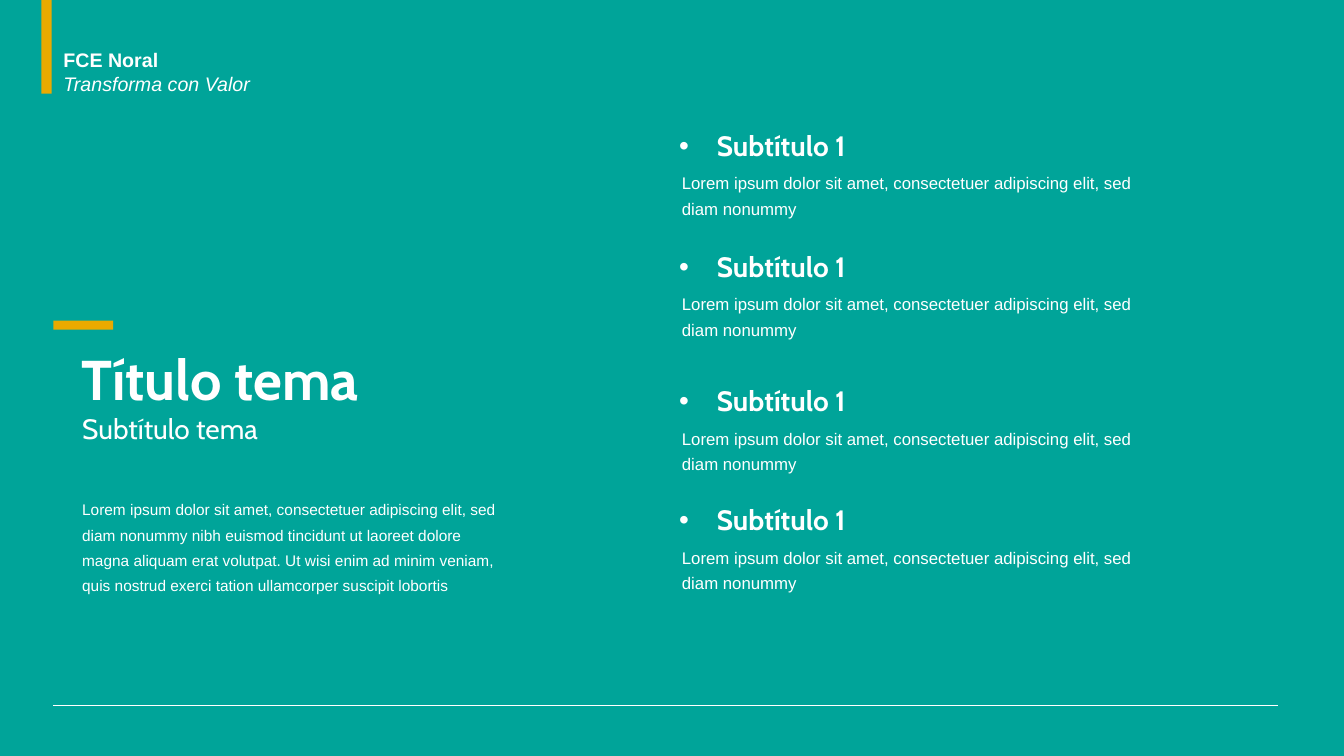
from dataclasses import dataclass

from lxml import etree
from pptx import Presentation
from pptx.dml.color import RGBColor
from pptx.enum.shapes import MSO_CONNECTOR, MSO_SHAPE
from pptx.enum.text import MSO_ANCHOR, MSO_AUTO_SIZE
from pptx.oxml.ns import qn
from pptx.slide import Slide
from pptx.text.text import _Paragraph
from pptx.util import Pt

RECT = MSO_SHAPE.RECTANGLE
LINE = MSO_CONNECTOR.STRAIGHT
TOP = MSO_ANCHOR.TOP
MID = MSO_ANCHOR.MIDDLE
GROW = MSO_AUTO_SIZE.SHAPE_TO_FIT_TEXT
FIXED = MSO_AUTO_SIZE.NONE

WHITE = "FFFFFF"
TEAL = "00A499"
GOLD = "EAAA00"
LOREM = "Lorem ipsum dolor sit amet, consectetuer adipiscing elit, sed diam nonummy"
BODY = (LOREM + " nibh euismod tincidunt ut laoreet dolore magna aliquam erat volutpat. "
        "Ut wisi enim ad minim veniam, quis nostrud exerci tation ullamcorper "
        "suscipit lobortis")


@dataclass(frozen=True)
class Box:
    left: float
    top: float
    width: float
    height: float


@dataclass(frozen=True)
class Topic:
    top: float
    width: float
    title: str = "Subtítulo 1"
    text: str = LOREM


BARS = [Box(29.5, 0, 7.4, 67), Box(38.2, 229, 42.7, 6.5)]
TOPICS = [Topic(91.4, 349), Topic(177.8, 337), Topic(273.6, 337), Topic(358.6, 337)]


def color(code: str) -> RGBColor:
    return RGBColor.from_string(code)


def add_bullet(para: _Paragraph, indent: float) -> None:
    props = para._p.get_or_add_pPr()
    props.set("marL", str(Pt(indent)))
    props.set("indent", str(-Pt(indent)))
    etree.SubElement(props, qn("a:buFont")).set("typeface", "Arial")
    etree.SubElement(props, qn("a:buChar")).set("char", "•")


def add_text(slide: Slide, box: Box, text: str, *, size: float, font: str = "Arial",
             bold: bool = False, anchor: MSO_ANCHOR = TOP, grow: bool = False,
             wrap: bool = True, lead: float | Pt | None = None, before: float = 0,
             bullet: bool = False, slogan: str = "") -> None:
    shape = slide.shapes.add_textbox(Pt(box.left), Pt(box.top), Pt(box.width), Pt(box.height))
    frame = shape.text_frame
    frame.word_wrap = wrap
    frame.auto_size = GROW if grow else FIXED
    frame.vertical_anchor = anchor
    para = frame.paragraphs[0]
    para.line_spacing = lead
    para.space_before = Pt(before)
    if bullet:
        add_bullet(para, 27)
    parts = [(para, text, bold, False)]
    if slogan:
        parts.append((frame.add_paragraph(), slogan, False, True))
    for para, words, heavy, slant in parts:
        run = para.add_run()
        run.text = words
        run.font.name = font
        run.font.size = Pt(size)
        run.font.bold = heavy
        run.font.italic = slant
        run.font.color.rgb = color(WHITE)


def add_bar(slide: Slide, box: Box) -> None:
    bar = slide.shapes.add_shape(RECT, Pt(box.left), Pt(box.top), Pt(box.width), Pt(box.height))
    bar.shadow.inherit = False
    bar.fill.solid()
    bar.fill.fore_color.rgb = color(GOLD)
    bar.line.fill.background()


def add_rule(slide: Slide, left: float, right: float, top: float) -> None:
    rule = slide.shapes.add_connector(LINE, Pt(left), Pt(top), Pt(right), Pt(top))
    rule.line.color.rgb = color(WHITE)
    rule.line.width = Pt(0.5)
    etree.SubElement(rule._element.spPr, qn("a:effectLst"))


def add_topic(slide: Slide, topic: Topic) -> None:
    add_text(slide, Box(478, topic.top, 186, 25.2), topic.title, size=20, font="Cabin",
             bold=True, anchor=MID, bullet=True)
    add_text(slide, Box(480, topic.top + 25.2, topic.width, 42), topic.text, size=12,
             grow=True, lead=Pt(18))


def main() -> None:
    deck = Presentation()
    deck.slide_width = Pt(960)
    deck.slide_height = Pt(540)
    slide = deck.slides.add_slide(deck.slide_layouts[6])
    slide.background.fill.solid()
    slide.background.fill.fore_color.rgb = color(TEAL)

    add_text(slide, Box(38.2, 31, 148.3, 41), "FCE Noral", size=14, bold=True,
             grow=True, wrap=False, slogan="Transforma con Valor")
    add_rule(slide, 38.2, 913, 504)
    for bar in BARS:
        add_bar(slide, bar)
    add_text(slide, Box(51.2, 253.4, 284.4, 33.1), "Título tema", size=40, font="Cabin",
             bold=True, anchor=MID)
    add_text(slide, Box(51.6, 293, 270.7, 32.4), "Subtítulo tema", size=20, font="Cabin",
             lead=0.9, before=10)
    add_text(slide, Box(51.6, 349.2, 319.7, 77.8), BODY, size=11, grow=True, lead=Pt(18))
    for topic in TOPICS:
        add_topic(slide, topic)
    deck.save("out.pptx")


if __name__ == "__main__":
    main()
